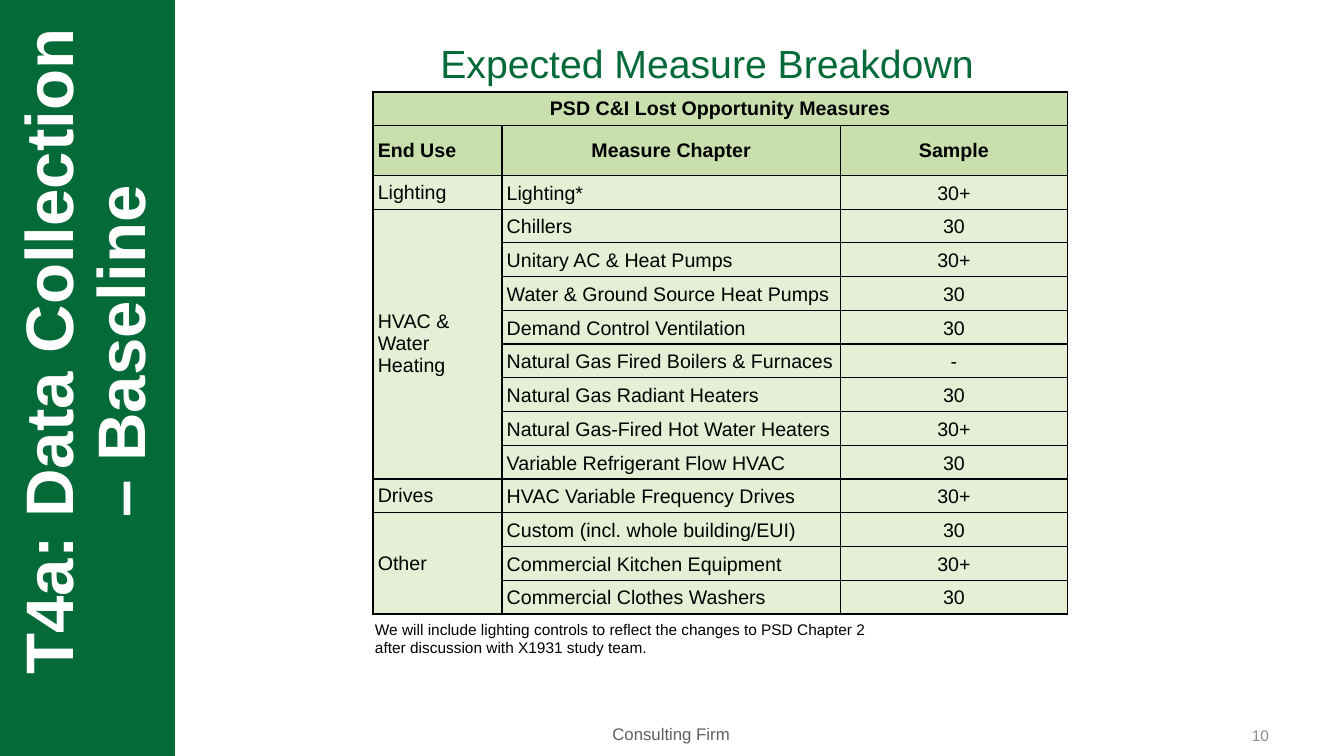
from dataclasses import dataclass

from lxml import etree
from pptx import Presentation
from pptx.dml.color import RGBColor
from pptx.enum.shapes import MSO_SHAPE
from pptx.enum.text import MSO_ANCHOR, MSO_AUTO_SIZE, PP_ALIGN
from pptx.oxml.ns import qn
from pptx.util import Cm, Pt

LEFT, CENTER, RIGHT = PP_ALIGN.LEFT, PP_ALIGN.CENTER, PP_ALIGN.RIGHT
TOP, MIDDLE, BOTTOM = MSO_ANCHOR.TOP, MSO_ANCHOR.MIDDLE, MSO_ANCHOR.BOTTOM
RECT, FIXED = MSO_SHAPE.RECTANGLE, MSO_AUTO_SIZE.NONE

TITLE = "T4a: Data Collection – Baseline"
HEADING = "Expected Measure Breakdown"
CAPTION = "PSD C&I Lost Opportunity Measures"
HEADS = ("End Use", "Measure Chapter", "Sample")
GROUPS = [
    ("Lighting", [("Lighting*", "30+")]),
    ("HVAC & Water Heating", [
        ("Chillers", "30"),
        ("Unitary AC & Heat Pumps", "30+"),
        ("Water & Ground Source Heat Pumps", "30"),
        ("Demand Control Ventilation", "30"),
        ("Natural Gas Fired Boilers & Furnaces", "-"),
        ("Natural Gas Radiant Heaters", "30"),
        ("Natural Gas-Fired Hot Water Heaters", "30+"),
        ("Variable Refrigerant Flow HVAC", "30"),
    ]),
    ("Drives", [("HVAC Variable Frequency Drives", "30+")]),
    ("Other", [
        ("Custom (incl. whole building/EUI)", "30"),
        ("Commercial Kitchen Equipment", "30+"),
        ("Commercial Clothes Washers", "30"),
    ]),
]
NOTE = ("We will include lighting controls to reflect the changes to PSD Chapter 2\n"
        "after discussion with X1931 study team.")
FOOTER = "Consulting Firm"
NUMBER = "10"


@dataclass(frozen=True)
class Theme:
    font: str = "Arial"
    green: str = "046A38"
    head: str = "C9DFAE"
    body: str = "E4EFD6"
    white: str = "FFFFFF"
    black: str = "000000"
    gray: str = "606060"
    pale: str = "8C8C8C"
    title: int = 48
    heading: int = 28
    cell: int = 14
    footer: int = 12
    small: int = 11


THEME = Theme()
WIDE, HIGH = Cm(33.87), Cm(19.05)
COLS = (Cm(3.25), Cm(8.53), Cm(5.72))
ROW, TALL = Cm(0.85), Cm(1.25)
INSET = Cm(0.12)


def write(frame, text, size, color, bold=False, align=LEFT):
    frame.text = text
    for para in frame.paragraphs:
        para.alignment = align
        for run in para.runs:
            font = run.font
            font.name, font.size, font.bold = THEME.font, Pt(size), bold
            font.color.rgb = RGBColor.from_string(color)


def label(slide, box, text, size, color, align=LEFT, anchor=TOP, wrap=True):
    frame = slide.shapes.add_textbox(*map(Cm, box)).text_frame
    frame.word_wrap, frame.vertical_anchor = wrap, anchor
    write(frame, text, size, color, align=align)


def border(cell):
    """Draw a thin black line on all four sides; call after the fill is set."""
    props = cell._tc.get_or_add_tcPr()
    for spot, side in enumerate(("a:lnL", "a:lnR", "a:lnT", "a:lnB")):
        line = etree.Element(qn(side), w=str(Pt(1)))
        fill = etree.SubElement(line, qn("a:solidFill"))
        etree.SubElement(fill, qn("a:srgbClr"), val=THEME.black)
        props.insert(spot, line)


def add_bar(slide):
    bar = slide.shapes.add_shape(RECT, 0, 0, Cm(4.4), HIGH)
    bar.shadow.inherit = False
    bar.fill.solid()
    bar.fill.fore_color.rgb = bar.line.color.rgb = RGBColor.from_string(THEME.green)
    bar.line.width = Pt(1)
    slide.shapes._spTree.insert(2, bar._element)  # behind the title


def add_title(slide):
    title = slide.shapes.title
    title.left, title.top, title.width, title.height = map(Cm, (-6.3, 6.88, 17.02, 3.96))
    title.rotation = 270
    frame = title.text_frame
    frame.auto_size, frame.word_wrap, frame.vertical_anchor = FIXED, True, MIDDLE
    write(frame, TITLE, THEME.title, THEME.white, True, CENTER)
    frame.paragraphs[0].line_spacing = 0.9


def add_grid(slide):
    rows = [(CAPTION, "", ""), HEADS]
    spans = []
    for use, items in GROUPS:
        spans.append((len(rows), len(rows) + len(items) - 1))
        for spot, (name, count) in enumerate(items):
            rows.append((use if spot == 0 else "", name, count))
    highs = [TALL if row is HEADS else ROW for row in rows]
    grid = slide.shapes.add_table(len(rows), len(COLS), Cm(9.4), Cm(2.32),
                                  sum(COLS), sum(highs)).table
    grid.first_row = grid.horz_banding = False
    for col, wide in zip(grid.columns, COLS):
        col.width = wide
    for row, high in zip(grid.rows, highs):
        row.height = high
    for r, row in enumerate(rows):
        head = r < 2
        for c, text in enumerate(row):
            cell = grid.cell(r, c)
            cell.margin_left = cell.margin_right = INSET
            cell.margin_top = cell.margin_bottom = INSET
            cell.vertical_anchor = MIDDLE if head or c == 0 else BOTTOM
            cell.fill.solid()
            cell.fill.fore_color.rgb = RGBColor.from_string(THEME.head if head else THEME.body)
            border(cell)
            mid = r == 0 or c == 2 or (head and c == 1)
            write(cell.text_frame, text, THEME.cell, THEME.black, head, CENTER if mid else LEFT)
    grid.cell(0, 0).merge(grid.cell(0, 2))
    for first, last in spans:
        if last > first:
            grid.cell(first, 0).merge(grid.cell(last, 0))


def main():
    deck = Presentation()
    deck.slide_width, deck.slide_height = WIDE, HIGH
    slide = deck.slides.add_slide(deck.slide_layouts[5])
    add_bar(slide)
    add_title(slide)
    label(slide, (15.06, 18.11, 3.71, 0.76), FOOTER, THEME.footer, THEME.gray, CENTER, wrap=False)
    label(slide, (24.33, 18.01, 7.9, 1.02), NUMBER, THEME.small, THEME.pale, RIGHT, MIDDLE)
    label(slide, (10.85, 0.86, 14.12, 1.45), HEADING, THEME.heading, THEME.green, wrap=False)
    add_grid(slide)
    label(slide, (9.2, 15.49, 18.54, 1.19), NOTE, THEME.small, THEME.black)
    deck.save("out.pptx")


if __name__ == "__main__":
    main()
